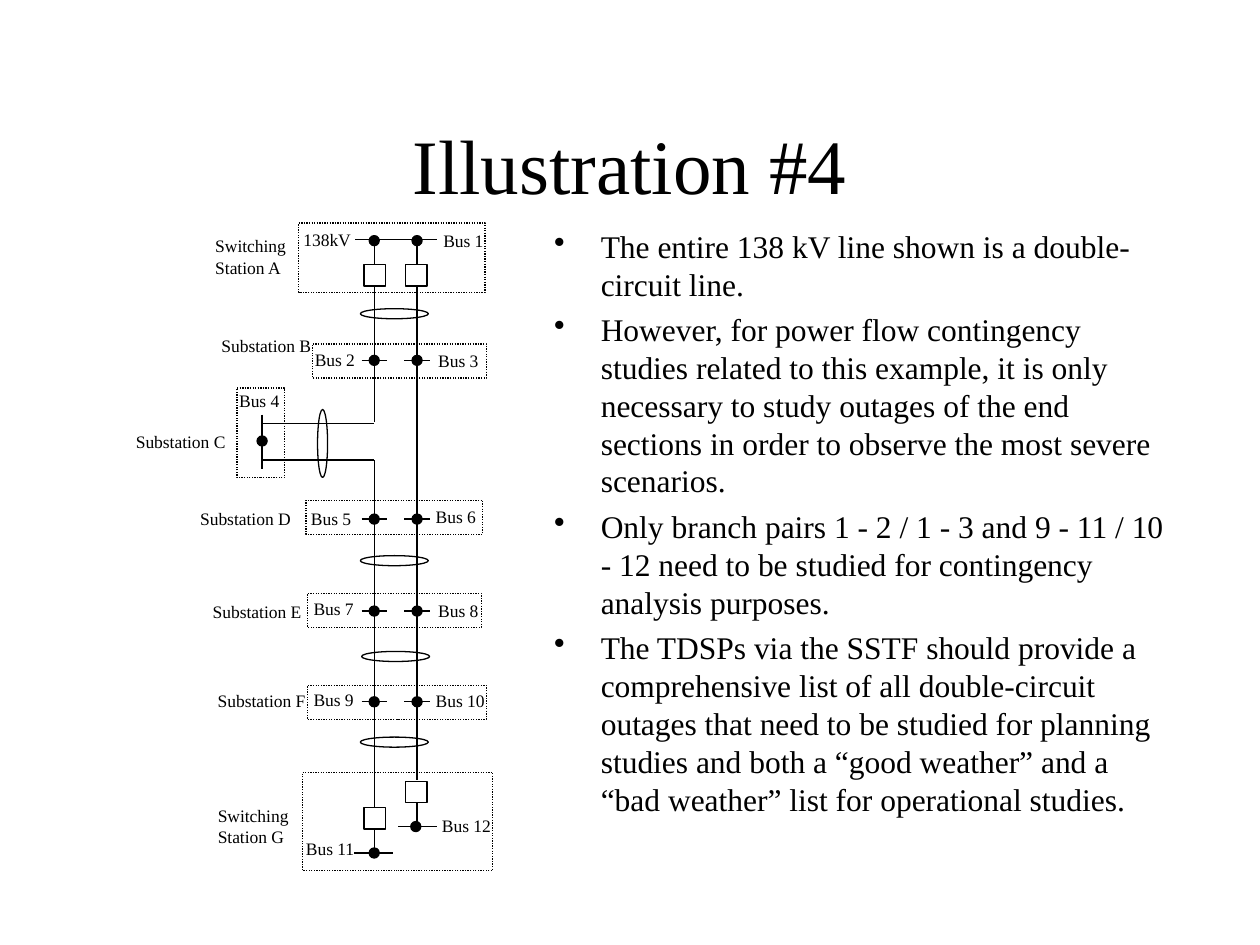
"""Build a slide that shows a double-circuit 138 kV line beside four notes."""
from dataclasses import dataclass

from lxml import etree
from pptx import Presentation
from pptx.dml.color import RGBColor
from pptx.enum.dml import MSO_LINE
from pptx.enum.shapes import MSO_CONNECTOR, MSO_SHAPE
from pptx.enum.text import MSO_ANCHOR, PP_ALIGN
from pptx.oxml.ns import qn
from pptx.util import Emu, Pt

PX = 9144
STRAIGHT = MSO_CONNECTOR.STRAIGHT
RECTANGLE, OVAL = MSO_SHAPE.RECTANGLE, MSO_SHAPE.OVAL
DOTTED = MSO_LINE.ROUND_DOT
TOP, MIDDLE = MSO_ANCHOR.TOP, MSO_ANCHOR.MIDDLE
LEFT, CENTER = PP_ALIGN.LEFT, PP_ALIGN.CENTER


@dataclass(frozen=True)
class Theme:
    """Colours, font and type sizes of the slide."""

    ink: RGBColor = RGBColor(0, 0, 0)
    font: str = "Times New Roman"
    title: int = 44
    body: int = 18
    label: int = 10
    line: float = 0.75
    gap: float = 4.5


THEME = Theme()
RAILS = 297, 331
DOT, BREAKER, TICK, HANG = 8, 17, 10, 37
LABEL_HEIGHT, STATION_HEIGHT = 27, 44
BUS_WIDTH, WIDE_BUS_WIDTH = 54, 63
SUBSTATION_WIDTH, STATION_WIDTH = 96, 105

NOTES = (
    "The entire 138 kV line shown is a double-circuit line.",
    "However, for power flow contingency studies related to this example, it is only "
    "necessary to study outages of the end sections in order to observe the most "
    "severe scenarios.",
    "Only branch pairs 1 - 2 / 1 - 3 and 9 - 11 / 10 - 12 need to be studied for "
    "contingency analysis purposes.",
    "The TDSPs via the SSTF should provide a comprehensive list of all double-circuit "
    "outages that need to be studied for planning studies and both a “good weather” "
    "and a “bad weather” list for operational studies.",
)
WIRES = (
    (282, 190, 347, 190), (297, 191, 297, 210), (331, 191, 331, 210),
    (331, 227, 331, 619), (297, 227, 297, 335), (297, 365, 297, 641),
    (208, 336, 297, 336), (208, 365, 297, 365), (208, 329, 208, 372),
    (331, 637, 331, 656), (297, 658, 297, 677),
    (316, 656, 347, 656), (281, 677, 312, 677),
)
BUS_ROWS = (286, 412, 485, 557)
END_DOTS = ((297, 191), (331, 191), (208, 350), (330, 656), (297, 677))
BREAKERS = ((289, 210), (322, 210), (322, 620), (289, 641))
SITES = (
    (237, 177, 148, 55), (248, 273, 138, 27), (188, 308, 38, 71), (243, 397, 140, 27),
    (244, 471, 138, 27), (244, 544, 142, 27), (240, 613, 151, 78),
)
CIRCUIT_LOOPS = (
    (286, 245, 54, 8), (252, 325, 8, 54), (286, 441, 54, 8),
    (287, 517, 54, 8), (286, 585, 54, 8),
)
BUS_LABELS = (
    ("Bus 1", 342, 178), ("Bus 2", 240, 272), ("Bus 3", 338, 273), ("Bus 4", 180, 305),
    ("Bus 5", 237, 398), ("Bus 6", 336, 397), ("Bus 7", 239, 470), ("Bus 8", 338, 471),
    ("Bus 9", 239, 542),
)
WIDE_BUS_LABELS = (
    ("138kV", 231, 177), ("Bus 10", 336, 543), ("Bus 12", 341, 642), ("Bus 11", 233, 660),
)
SUBSTATION_LABELS = (
    ("Substation B", 166, 261), ("Substation C", 98, 337), ("Substation D", 149, 398),
    ("Substation E", 159, 472), ("Substation F", 163, 543),
)
STATION_LABELS = (("Switching Station A", 161, 182), ("Switching Station G", 163, 634))


def scaled(*lengths):
    """Turn px lengths into EMU."""
    return [Emu(length * PX) for length in lengths]


def add_wire(page, x1, y1, x2, y2):
    """Draw a plain straight wire."""
    wire = page.shapes.add_connector(STRAIGHT, *scaled(x1, y1, x2, y2))
    wire.line.color.rgb = THEME.ink
    wire.line.width = Pt(THEME.line)
    etree.SubElement(wire.element.spPr, qn("a:effectLst"))


def add_outline(page, kind, frame, filled=False, dash=None):
    """Draw a thin-lined shape, hollow unless filled."""
    shape = page.shapes.add_shape(kind, *scaled(*frame))
    shape.shadow.inherit = False
    if filled:
        shape.fill.solid()
        shape.fill.fore_color.rgb = THEME.ink
    else:
        shape.fill.background()
    shape.line.color.rgb = THEME.ink
    shape.line.width = Pt(THEME.line)
    if dash is not None:
        shape.line.dash_style = dash


def add_dot(page, x, y):
    """Mark a bus with a dot centred on a point."""
    add_outline(page, OVAL, (x - DOT // 2, y - DOT // 2, DOT, DOT), filled=True)


def add_bullet(para):
    """Give a paragraph a hanging bullet."""
    properties = para._p.get_or_add_pPr()
    properties.set("marL", str(HANG * PX))
    properties.set("indent", str(-HANG * PX))
    etree.SubElement(properties, qn("a:buChar")).set("char", "•")


def add_text(page, frame, texts, size, align=LEFT, anchor=TOP, bullets=False):
    """Write paragraphs of one size in a wrapping box."""
    box = page.shapes.add_textbox(*scaled(*frame)).text_frame
    box.word_wrap = True
    box.vertical_anchor = anchor
    for index, text in enumerate(texts):
        para = box.add_paragraph() if index else box.paragraphs[0]
        para.text = text
        para.alignment = align
        if index:
            para.space_before = Pt(THEME.gap)
        if bullets:
            add_bullet(para)
        para.font.name = THEME.font
        para.font.size = Pt(size)
        para.font.color.rgb = THEME.ink


def add_labels(page, labels, width, height=LABEL_HEIGHT):
    """Write a family of labels that share one box size."""
    for text, x, y in labels:
        add_text(page, (x, y, width, height), [text], THEME.label)


def add_diagram(page):
    """Draw the line, its buses, sites and circuit loops."""
    for wire in WIRES:
        add_wire(page, *wire)
    for y in BUS_ROWS:
        for x in RAILS:
            add_wire(page, x - TICK, y, x + TICK, y)
            add_dot(page, x, y)
    for x, y in END_DOTS:
        add_dot(page, x, y)
    for x, y in BREAKERS:
        add_outline(page, RECTANGLE, (x, y, BREAKER, BREAKER))
    for site in SITES:
        add_outline(page, RECTANGLE, site, dash=DOTTED)
    for loop in CIRCUIT_LOOPS:
        add_outline(page, OVAL, loop)


def main():
    """Build and save the deck."""
    deck = Presentation()
    deck.slide_width, deck.slide_height = scaled(1000, 750)
    page = deck.slides.add_slide(deck.slide_layouts[6])
    add_text(page, (75, 67, 850, 125), ["Illustration #4"], THEME.title, CENTER, MIDDLE)
    add_text(page, (430, 175, 510, 492), NOTES, THEME.body, bullets=True)
    add_diagram(page)
    add_labels(page, BUS_LABELS, BUS_WIDTH)
    add_labels(page, WIDE_BUS_LABELS, WIDE_BUS_WIDTH)
    add_labels(page, SUBSTATION_LABELS, SUBSTATION_WIDTH)
    add_labels(page, STATION_LABELS, STATION_WIDTH, STATION_HEIGHT)
    deck.save("out.pptx")


if __name__ == "__main__":
    main()
